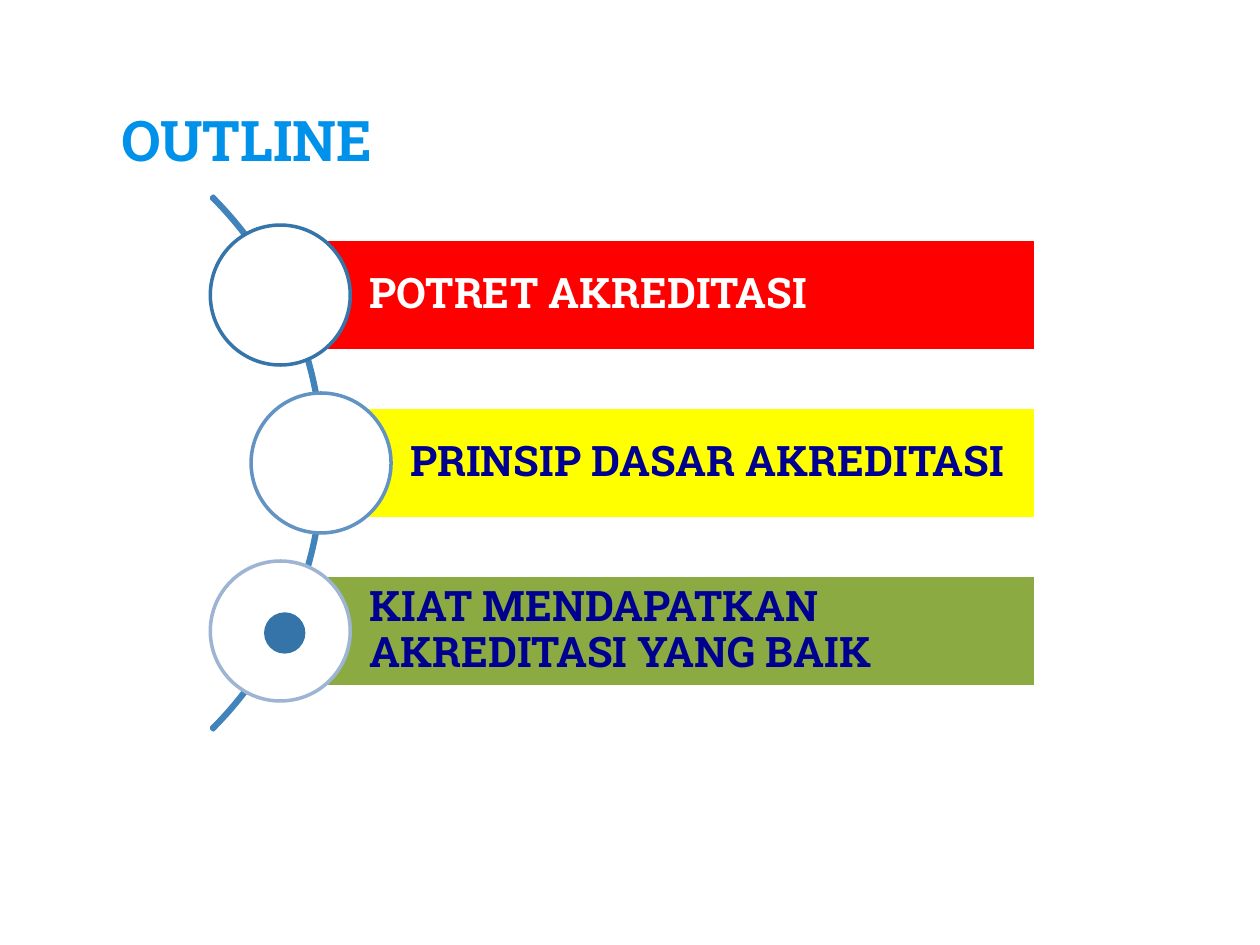
from dataclasses import dataclass

from pptx import Presentation
from pptx.dml.color import RGBColor
from pptx.enum.shapes import MSO_SHAPE as Shape
from pptx.enum.text import MSO_ANCHOR as Anchor, MSO_AUTO_SIZE as AutoSize, PP_ALIGN as Align
from pptx.util import Pt


@dataclass(frozen=True)
class Theme:
    font: str = "Roboto Slab"
    title_size: int = 32
    label_size: int = 24
    line_width: int = 2
    title: str = "0091EA"
    arc: str = "4183BB"
    white: str = "FFFFFF"
    navy: str = "000090"
    red: str = "FF0000"
    yellow: str = "FFFF00"
    green: str = "8BAB42"
    rings: tuple = ("3575A9", "6393C3", "9DB4D2")
    dot: str = "3474A8"


theme = Theme()


def add_shape(kind, left, top, width, height, fill=None, line=None):
    """Add a preset shape without shadow; a missing fill or line stays empty."""
    shape = slide.shapes.add_shape(kind, Pt(left), Pt(top), Pt(width), Pt(height))
    shape.shadow.inherit = False
    if fill:
        shape.fill.solid()
        shape.fill.fore_color.rgb = RGBColor.from_string(fill)
    else:
        shape.fill.background()
    if line:
        shape.line.color.rgb = RGBColor.from_string(line)
        shape.line.width = Pt(theme.line_width)
    else:
        shape.line.fill.background()
    return shape


def write_text(shape, text, size, color, anchor, margins):
    frame = shape.text_frame
    frame.text = text
    frame.word_wrap = True
    frame.auto_size = AutoSize.NONE
    frame.vertical_anchor = anchor
    frame.margin_left, frame.margin_top, frame.margin_right, frame.margin_bottom = map(Pt, margins)
    paragraph = frame.paragraphs[0]
    paragraph.alignment = Align.LEFT
    font = paragraph.runs[0].font
    font.name = theme.font
    font.size = Pt(size)
    font.bold = True
    font.color.rgb = RGBColor.from_string(color)
    return paragraph


presentation = Presentation()
presentation.slide_width, presentation.slide_height = Pt(720), Pt(540)
slide = presentation.slides.add_slide(presentation.slide_layouts[5])

title = slide.shapes.title
title.left, title.top, title.width, title.height = Pt(62), Pt(32.4), Pt(596), Pt(73.4)
write_text(title, "OUTLINE", theme.title_size, theme.title, Anchor.BOTTOM, (7.2,) * 4)

arc = add_shape(Shape.BLOCK_ARC, -246.2, 49, 431.2, 431.2, line=theme.arc)
for index, value in enumerate((189, 27, 0.0036)):
    arc.adjustments[index] = value

# Each bar starts at the centre of its circle and ends at a common right edge.
bar_right, bar_height, circle_size = 592, 64, 80
first_center, row_pitch = 168.6, 96
items = [
    ("POTRET AKREDITASI", 160.2, theme.red, theme.white),
    ("PRINSIP DASAR AKREDITASI", 183.5, theme.yellow, theme.navy),
    ("KIAT MENDAPATKAN AKREDITASI YANG BAIK", 160.2, theme.green, theme.navy),
]
for row, (label, center_x, fill, text_color) in enumerate(items):
    center_y = first_center + row * row_pitch
    bar = add_shape(Shape.RECTANGLE, center_x, center_y - bar_height / 2,
                    bar_right - center_x, bar_height, fill, theme.white)
    paragraph = write_text(bar, label, theme.label_size, text_color, Anchor.MIDDLE, (51, 5, 5, 5))
    paragraph.line_spacing = 0.9
    add_shape(Shape.OVAL, center_x - circle_size / 2, center_y - circle_size / 2,
              circle_size, circle_size, theme.white, theme.rings[row])

add_shape(Shape.OVAL, 150.9, 349.9, 23.6, 23.6, theme.dot)

presentation.save("out.pptx")
